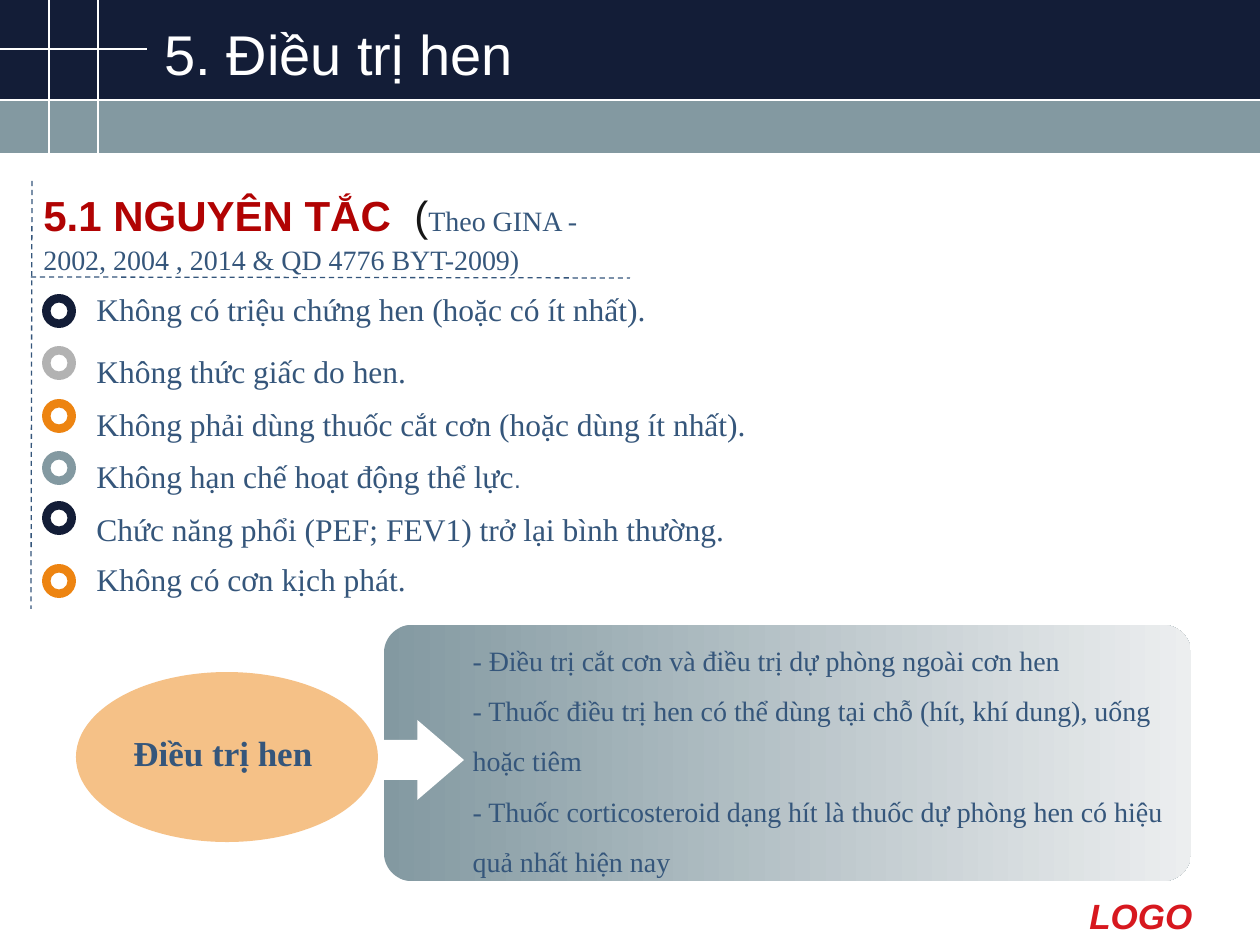
"""Build the asthma treatment slide with its principles and summary panel."""
from dataclasses import dataclass
from typing import Any, NamedTuple, Optional

import pptx
import pptx.dml.color
import pptx.enum.dml
import pptx.enum.shapes
import pptx.enum.text
import pptx.oxml
import pptx.oxml.ns
import pptx.util

PX = 914400 / 126
SHAPE = pptx.enum.shapes.MSO_SHAPE
ALIGN = pptx.enum.text.PP_ALIGN
ANCHOR = pptx.enum.text.MSO_ANCHOR


@dataclass(frozen=True)
class Theme:
    navy: str = "131D37"
    slate: str = "8399A1"
    mist: str = "ECEEEF"
    gray: str = "B2B2B2"
    orange: str = "ED8411"
    white: str = "FFFFFF"
    ink: str = "35567B"
    black: str = "161616"
    red: str = "B10303"
    logo: str = "D7181F"
    sans: str = "Arial"
    serif: str = "Times New Roman"
    title: int = 32
    heading: int = 24
    label: int = 20
    item: int = 18
    note: int = 16
    small: int = 14


T = Theme()


class Box(NamedTuple):
    x: int
    y: int
    w: int
    h: int


class Run(NamedTuple):
    text: str
    size: int = T.item
    color: str = T.ink
    font: str = T.serif
    bold: bool = False
    italic: bool = False


class Line(NamedTuple):
    x1: int
    y1: int
    x2: int
    y2: int
    color: str = T.white
    width: float = 1
    dashed: bool = False


class Principle(NamedTuple):
    ring_y: int
    text_y: int
    color: str
    runs: list[Run]


GRID = [Line(98, 0, 98, 156), Line(0, 49, 147, 49),
        Line(0, 100, 1260, 100), Line(49, 0, 49, 156)]
GUIDES = [Line(32, 181, 31, 609, T.ink, 0.75, True),
          Line(31, 277, 630, 278, T.ink, 0.75, True)]
PRINCIPLES = [
    Principle(294, 284, T.navy, [Run("Không có triệu chứng hen (hoặc có ít nhất).")]),
    Principle(346, 346, T.gray, [Run("Không thức giấc do hen.")]),
    Principle(399, 399, T.orange, [Run("Không phải dùng thuốc cắt cơn (hoặc dùng ít nhất).")]),
    Principle(451, 451, T.slate, [Run("Không hạn chế hoạt động thể lực"),
                                  Run(".", T.small, font=T.sans)]),
    Principle(501, 504, T.navy, [Run("Chức năng phổi (PEF; FEV1) trở lại bình thường.")]),
    Principle(564, 554, T.orange, [Run("Không có cơn kịch phát.")]),
]
TREATMENTS = [
    "- Điều trị cắt cơn và điều trị dự phòng ngoài cơn hen",
    "- Thuốc điều trị hen có thể dùng tại chỗ (hít, khí dung), uống hoặc tiêm",
    "- Thuốc corticosteroid dạng hít là thuốc dự phòng hen có hiệu quả nhất hiện nay",
]


def emu(px: int) -> int:
    """Convert pixels to EMU."""
    return round(px * PX)


def rgb(color: str) -> pptx.dml.color.RGBColor:
    """Return the colour object for a hex string."""
    return pptx.dml.color.RGBColor.from_string(color)


def style(r: Any, run: Run) -> None:
    """Apply the formatting of a run description."""
    r.font.name, r.font.size = run.font, pptx.util.Pt(run.size)
    r.font.bold, r.font.italic = run.bold, run.italic
    r.font.color.rgb = rgb(run.color)


def add_panel(s: Any, kind: Any, box: Box, color: str, adj: tuple[float, ...] = ()) -> Any:
    """Add a filled preset shape without outline or shadow."""
    sp = s.shapes.add_shape(kind, *map(emu, box))
    sp.shadow.inherit = False
    sp.line.fill.background()
    sp.fill.solid()
    sp.fill.fore_color.rgb = rgb(color)
    for i, value in enumerate(adj):
        sp.adjustments[i] = value
    return sp


def add_line(s: Any, line: Line) -> None:
    """Add a straight line."""
    c = s.shapes.add_connector(pptx.enum.shapes.MSO_CONNECTOR.STRAIGHT, *map(emu, line[:4]))
    c.line.color.rgb = rgb(line.color)
    c.line.width = pptx.util.Pt(line.width)
    if line.dashed:
        c.line.dash_style = pptx.enum.dml.MSO_LINE.DASH
    pptx.oxml.ns.qn("a:effectLst")
    c._element.spPr.append(pptx.oxml.parse_xml(
        f"<a:effectLst {pptx.oxml.ns.nsdecls('a')}/>"))


def add_text(s: Any, box: Box, runs: list[Run], align: Any = ALIGN.LEFT,
             spacing: Optional[float] = None) -> None:
    """Add a wrapped one-paragraph text box."""
    tf = s.shapes.add_textbox(*map(emu, box)).text_frame
    tf.word_wrap = True
    p = tf.paragraphs[0]
    p.alignment, p.line_spacing = align, spacing
    for run in runs:
        r = p.add_run()
        r.text = run.text
        style(r, run)


def fill_placeholder(s: Any, sp: Any, box: Box, lines: list[str], look: Run,
                     anchor: Any, spacing: float) -> None:
    """Bring a placeholder to the front, place it and write its paragraphs."""
    s.shapes._spTree.append(sp._element)
    sp.left, sp.top, sp.width, sp.height = map(emu, box)
    tf = sp.text_frame
    tf.text = "\n".join(lines)
    tf.word_wrap, tf.vertical_anchor = True, anchor
    tf.auto_size = pptx.enum.text.MSO_AUTO_SIZE.NONE
    for p in tf.paragraphs:
        pPr = p._p.get_or_add_pPr()
        pPr.set("marL", "0")
        pPr.set("indent", "0")
        pPr.append(pptx.oxml.parse_xml(f"<a:buNone {pptx.oxml.ns.nsdecls('a')}/>"))
        p.alignment, p.line_spacing = ALIGN.LEFT, spacing
        p.space_before = pptx.util.Pt(0)
        for r in p.runs:
            style(r, look)


def main() -> None:
    """Draw the slide and save it."""
    prs = pptx.Presentation()
    prs.slide_width, prs.slide_height = emu(1260), emu(945)
    s = prs.slides.add_slide(prs.slide_layouts[1])
    title, body = s.placeholders

    add_panel(s, SHAPE.RECTANGLE, Box(0, 100, 1260, 53), T.slate)
    add_panel(s, SHAPE.RECTANGLE, Box(0, 0, 1260, 100), T.navy)
    add_text(s, Box(1016, 888, 189, 42),
             [Run("LOGO", T.label, T.logo, T.sans, True, True)], ALIGN.RIGHT)
    for line in GRID + GUIDES:
        add_line(s, line)
    fill_placeholder(s, title, Box(152, 10, 1071, 87), ["5. Điều trị hen"],
                     Run("", T.title, T.white, T.sans), ANCHOR.MIDDLE, 1.0)

    add_text(s, Box(31, 178, 617, 106), [
        Run("5.1 NGUYÊN TẮC ", T.heading, T.red, T.sans, True),
        Run(" (", T.heading, T.black, T.sans),
        Run("Theo GINA - 2002, 2004 , 2014 & QD 4776 BYT-2009)", T.note),
    ], spacing=1.1)
    for item in PRINCIPLES:
        add_panel(s, SHAPE.DONUT, Box(42, item.ring_y, 34, 34), item.color, (0.25,))
        add_text(s, Box(84, item.text_y, 683, 50), item.runs)

    panel = add_panel(s, SHAPE.ROUNDED_RECTANGLE, Box(384, 625, 807, 256), T.slate, (0.109,))
    panel.fill.gradient()
    panel.fill.gradient_angle = 0
    for stop, color, position in zip(panel.fill.gradient_stops, (T.slate, T.mist), (0, 1)):
        stop.color.rgb, stop.position = rgb(color), position
    add_panel(s, SHAPE.RIGHT_ARROW, Box(376, 720, 88, 80), T.white, (0.5, 0.583))
    oval = add_panel(s, SHAPE.OVAL, Box(76, 672, 302, 170), T.orange)
    tint = oval._element.spPr.find(".//" + pptx.oxml.ns.qn("a:srgbClr"))
    tint.append(pptx.oxml.parse_xml(
        f"<a:alpha {pptx.oxml.ns.nsdecls('a')} val='50000'/>"))
    add_text(s, Box(121, 725, 215, 55), [Run("Điều trị hen", T.label, bold=True)])
    fill_placeholder(s, body, Box(460, 620, 756, 267), TREATMENTS,
                     Run("", T.note), ANCHOR.TOP, 1.5)
    prs.save("out.pptx")


if __name__ == "__main__":
    main()
